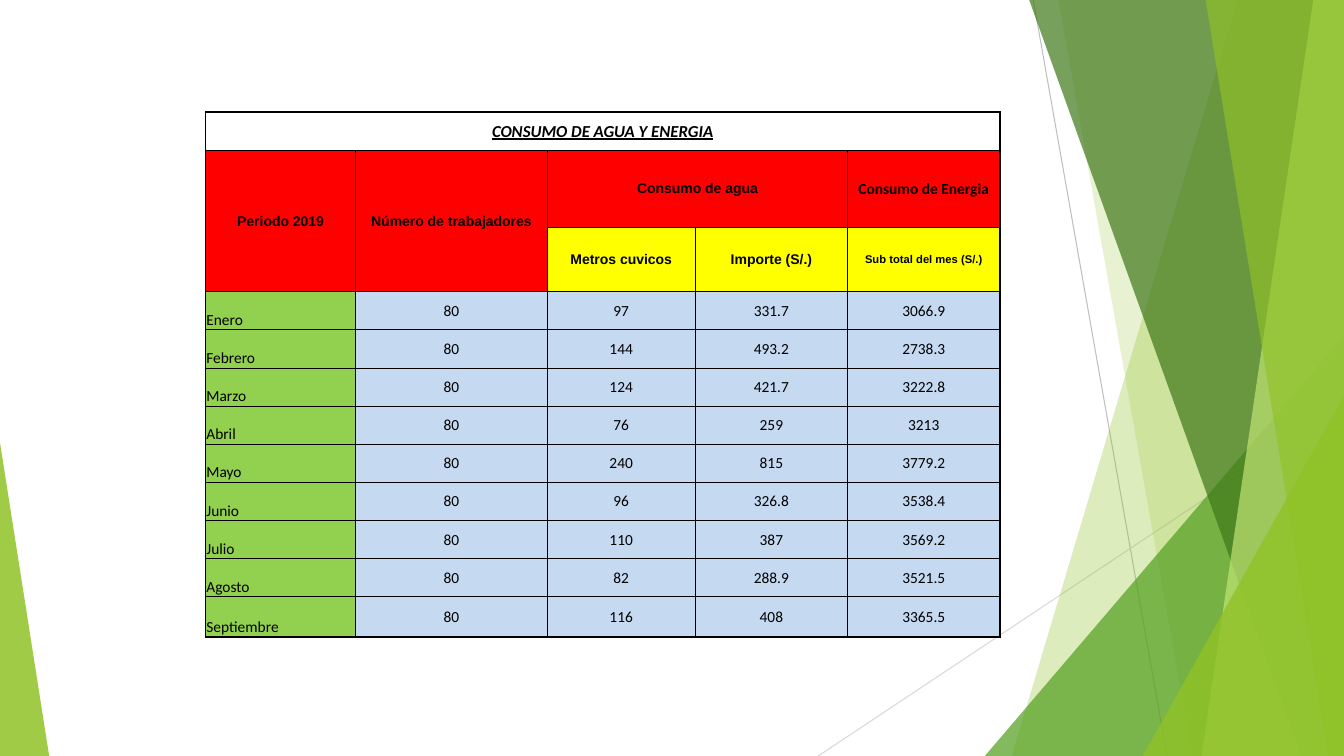
from dataclasses import dataclass, field

from lxml import etree
from pptx import Presentation
from pptx.dml.color import RGBColor
from pptx.enum.shapes import MSO_CONNECTOR, MSO_SHAPE
from pptx.enum.text import MSO_ANCHOR, PP_ALIGN
from pptx.oxml.ns import qn
from pptx.util import Cm, Pt

STRAIGHT = MSO_CONNECTOR.STRAIGHT
TRIANGLE = MSO_SHAPE.ISOSCELES_TRIANGLE
MIDDLE, BOTTOM = MSO_ANCHOR.MIDDLE, MSO_ANCHOR.BOTTOM
CENTER, LEFT = PP_ALIGN.CENTER, PP_ALIGN.LEFT

BLACK = RGBColor(0x00, 0x00, 0x00)
GRAY = RGBColor(0xBF, 0xBF, 0xBF)
LIGHT_GRAY = RGBColor(0xD9, 0xD9, 0xD9)
LIME = RGBColor(0x90, 0xC2, 0x26)
PALE_LIME = RGBColor(0xC0, 0xE4, 0x74)
GREEN = RGBColor(0x54, 0xA0, 0x21)
DARK_GREEN = RGBColor(0x3F, 0x78, 0x19)
RED = RGBColor(0xFF, 0x00, 0x00)
YELLOW = RGBColor(0xFF, 0xFF, 0x00)
MONTH_GREEN = RGBColor(0x92, 0xD0, 0x50)
VALUE_BLUE = RGBColor(0xC5, 0xD9, 0xF1)

SLIDE_W, SLIDE_H = 33.87, 19.05
FACET_TOP = -0.02


@dataclass
class Ray:
    start: tuple[float, float]
    end: tuple[float, float]
    color: RGBColor


@dataclass
class Facet:
    """Band from a slanted left side to the right edge of the slide."""
    top_x: float
    bottom_x: float
    color: RGBColor
    alpha: int


@dataclass
class Corner:
    """Right triangle standing on the bottom edge of the slide."""
    left: float
    top: float
    width: float
    apex: int
    color: RGBColor
    alpha: int


@dataclass
class CellStyle:
    fill: RGBColor | None
    font: dict = field(default_factory=dict)
    align: PP_ALIGN = CENTER
    anchor: MSO_ANCHOR = MIDDLE


# Decoration, from back to front
RAYS = [
    Ray((26.04, 0), (29.41, SLIDE_H), GRAY),
    Ray((SLIDE_W, 10.24), (20.62, SLIDE_H), LIGHT_GRAY),
]
PANES = [
    Facet(31.19, 25.5, LIME, 30),
    Facet(26.67, 30.05, LIME, 20),
    Corner(24.82, 8.46, 9.05, 1, GREEN, 72),
    Facet(25.93, 32.79, DARK_GREEN, 70),
    Facet(33.1, 30.28, PALE_LIME, 70),
    Facet(30.38, 33.48, LIME, 65),
    Corner(28.8, 9.98, 5.07, 1, LIME, 80),
    Corner(0, 11.15, 1.24, 0, LIME, 85),
]

# Table contents
HEADER = [
    ["CONSUMO DE AGUA Y ENERGIA", "", "", "", ""],
    ["Periodo 2019", "Número de trabajadores", "Consumo de agua", "", "Consumo de Energia"],
    ["", "", "Metros cuvicos", "Importe (S/.)", "Sub total del mes (S/.)"],
]
WORKERS = "80"
MONTHS = [
    ("Enero", "97", "331.7", "3066.9"),
    ("Febrero", "144", "493.2", "2738.3"),
    ("Marzo", "124", "421.7", "3222.8"),
    ("Abril", "76", "259", "3213"),
    ("Mayo", "240", "815", "3779.2"),
    ("Junio", "96", "326.8", "3538.4"),
    ("Julio", "110", "387", "3569.2"),
    ("Agosto", "82", "288.9", "3521.5"),
    ("Septiembre", "116", "408", "3365.5"),
]
ROWS = HEADER + [[month, WORKERS, *values] for month, *values in MONTHS]
COL_WIDTHS = [3.78, 4.83, 3.73, 3.84, 3.84]
ROW_HEIGHTS = [0.97, 1.93, 1.63] + [0.96] * 8 + [1.02]
MERGES = [((0, 0), (0, 4)), ((1, 0), (2, 0)), ((1, 1), (2, 1)), ((1, 2), (1, 3))]

# Cell styles
ARIAL_BOLD = {"name": "Arial", "size": Pt(10), "bold": True}
CALIBRI = {"name": "Calibri", "size": Pt(11), "bold": False}
TITLE = CellStyle(None, {"name": "Calibri", "size": Pt(12), "bold": True,
                         "italic": True, "underline": True})
GROUP = CellStyle(RED, ARIAL_BOLD)
ENERGY = CellStyle(RED, CALIBRI | {"bold": True})
UNIT = CellStyle(YELLOW, ARIAL_BOLD)
SUBTOTAL = CellStyle(YELLOW, ARIAL_BOLD | {"size": Pt(8)})
MONTH = CellStyle(MONTH_GREEN, CALIBRI, LEFT, BOTTOM)
VALUE = CellStyle(VALUE_BLUE, CALIBRI)
HEADER_STYLES = [
    [TITLE] * 5,
    [GROUP] * 4 + [ENERGY],
    [GROUP, GROUP, UNIT, UNIT, SUBTOTAL],
]
STYLES = HEADER_STYLES + [[MONTH] + [VALUE] * 4 for _ in MONTHS]


def draw_ray(s, ray: Ray) -> None:
    cx = s.shapes.add_connector(STRAIGHT, *map(Cm, ray.start + ray.end))
    cx.line.color.rgb = ray.color
    cx.line.width = Pt(0.75)
    etree.SubElement(cx._element.spPr, qn("a:effectLst"))


def draw_pane(s, pane: Facet | Corner) -> None:
    if isinstance(pane, Facet):
        fb = s.shapes.build_freeform(Cm(pane.top_x), Cm(FACET_TOP))
        points = [(SLIDE_W, FACET_TOP), (SLIDE_W, SLIDE_H), (pane.bottom_x, SLIDE_H)]
        fb.add_line_segments([(Cm(x), Cm(y)) for x, y in points])
        sp = fb.convert_to_shape()
    else:
        sp = s.shapes.add_shape(TRIANGLE, Cm(pane.left), Cm(pane.top),
                                Cm(pane.width), Cm(SLIDE_H - pane.top))
        sp.adjustments[0] = pane.apex
    sp.shadow.inherit = False
    sp.line.fill.background()
    sp.fill.solid()
    sp.fill.fore_color.rgb = pane.color
    clr = sp._element.spPr.find(qn("a:solidFill"))[0]
    etree.SubElement(clr, qn("a:alpha"), val=str(pane.alpha * 1000))


def set_borders(cell, widths: dict[str, float]) -> None:
    tc_pr = cell._tc.get_or_add_tcPr()
    for side, width in widths.items():
        ln = etree.SubElement(tc_pr, qn(f"a:ln{side}"), w=str(Pt(width)))
        fill = etree.SubElement(ln, qn("a:solidFill"))
        etree.SubElement(fill, qn("a:srgbClr"), val=str(BLACK))


def format_cell(cell, text: str, style: CellStyle) -> None:
    if style.fill is None:
        cell.fill.background()
    else:
        cell.fill.solid()
        cell.fill.fore_color.rgb = style.fill
    margin = Cm(0.02)
    layout = {"margin_left": margin, "margin_right": margin, "margin_top": margin,
              "margin_bottom": 0, "vertical_anchor": style.anchor}
    for name, value in layout.items():
        setattr(cell, name, value)
    p = cell.text_frame.paragraphs[0]
    p.alignment = style.align
    if text:
        r = p.add_run()
        r.text = text
        r.font.color.rgb = BLACK
        for name, value in style.font.items():
            setattr(r.font, name, value)


def draw_table(s) -> None:
    n_rows, n_cols = len(ROWS), len(COL_WIDTHS)
    frame = s.shapes.add_table(n_rows, n_cols, Cm(5.18), Cm(2.82),
                               Cm(sum(COL_WIDTHS)), Cm(sum(ROW_HEIGHTS)))
    table = frame.table
    table.first_row = table.horz_banding = False
    for col, width in zip(table.columns, COL_WIDTHS):
        col.width = Cm(width)
    for row, height in zip(table.rows, ROW_HEIGHTS):
        row.height = Cm(height)
    for first, last in MERGES:
        table.cell(*first).merge(table.cell(*last))
    for i, (texts, styles) in enumerate(zip(ROWS, STYLES)):
        for j, (text, style) in enumerate(zip(texts, styles)):
            cell = table.cell(i, j)
            # Thick outer frame, thin inner grid
            outer = {"L": j == 0, "R": j + cell.span_width == n_cols,
                     "T": i == 0, "B": i + cell.span_height == n_rows}
            set_borders(cell, {side: 1 if edge else 0.5 for side, edge in outer.items()})
            format_cell(cell, text, style)


def main() -> None:
    prs = Presentation()
    prs.slide_width, prs.slide_height = Cm(SLIDE_W), Cm(SLIDE_H)
    s = prs.slides.add_slide(prs.slide_layouts[6])
    for ray in RAYS:
        draw_ray(s, ray)
    for pane in PANES:
        draw_pane(s, pane)
    draw_table(s)
    prs.save("out.pptx")


if __name__ == "__main__":
    main()
